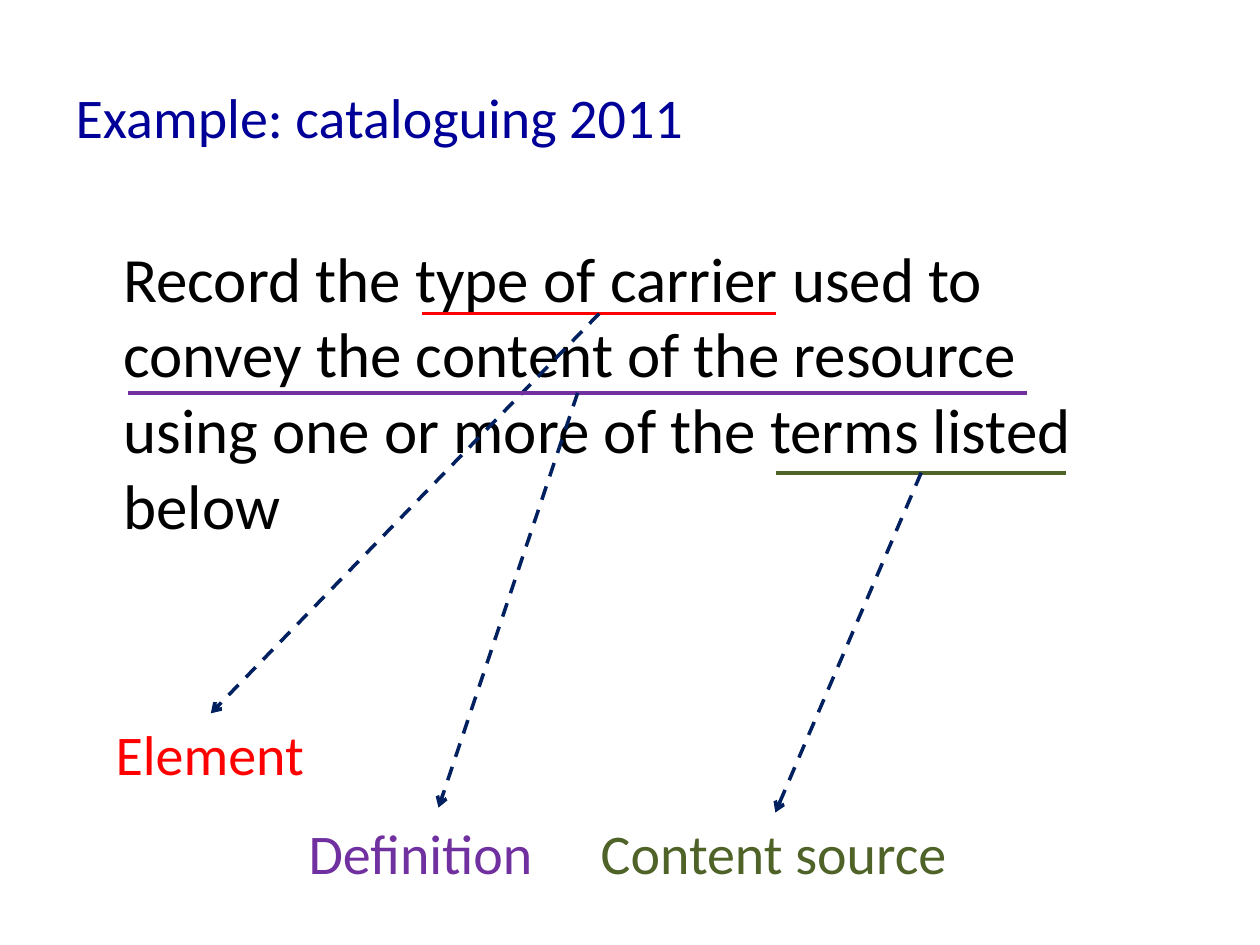
from pptx import Presentation
from pptx.dml.color import RGBColor
from pptx.enum import dml, shapes, text
from pptx.oxml.ns import qn
from pptx.util import Cm, Pt
from lxml import etree

COLORS = {"title": "000099", "body": "000000", "element": "FF0000",
          "definition": "7030A0", "source": "4F6228", "arrow": "002060"}

# label, colour, label box, underline (left, right, y), arrow end or None for the label's top
TERMS = [
    ("Element", "element", (2.08, 14.38, 4.34, 1.63), (8.51, 15.65, 6.32), None),
    ("Definition", "definition", (5.97, 16.38, 5.11, 1.63), (2.59, 20.7, 7.92), (8.84, 16.28)),
    ("Content source", "source", (11.86, 16.38, 7.54, 1.63), (15.65, 21.49, 9.53), None),
]


def place(sp, box):
    for name, value in zip(("left", "top", "width", "height"), box):
        setattr(sp, name, Cm(value))


def write(sp, words, color, size, **frame):
    """Put one left-aligned run in a shape; frame holds text frame settings."""
    tf = sp.text_frame
    for name, value in frame.items():
        setattr(tf, name, value)
    p = tf.paragraphs[0]
    p.alignment = text.PP_ALIGN.LEFT
    r = p.add_run()
    r.text = words
    for name, value in {"name": "Calibri", "size": Pt(size)}.items():
        setattr(r.font, name, value)
    r.font.color.rgb = RGBColor.from_string(COLORS[color])


def add_title(s, box):
    sp = s.shapes.title
    place(sp, box)
    write(sp, "Example: cataloguing 2011", "title", 32,
          vertical_anchor=text.MSO_ANCHOR.MIDDLE)


def add_text(s, box, words, color, size, wrap):
    sp = s.shapes.add_textbox(*map(Cm, box))
    write(sp, words, color, size, word_wrap=wrap,
          auto_size=text.MSO_AUTO_SIZE.SHAPE_TO_FIT_TEXT)
    return sp


def add_line(s, start, end, color):
    line = s.shapes.add_connector(shapes.MSO_CONNECTOR.STRAIGHT,
                                  *map(Cm, (*start, *end)))
    line.line.width = Pt(2)
    line.line.color.rgb = RGBColor.from_string(COLORS[color])
    etree.SubElement(line._element.spPr, qn("a:effectLst"))
    return line


def add_term(s, words, color, box, underline, target):
    """Underline a phrase and point from its middle to its label."""
    label = add_text(s, box, words, color, 32, False)
    left, right, y = underline
    add_line(s, (left, y), (right, y), color)
    x, top, width, _ = box
    arrow = add_line(s, ((left + right) / 2, y), target or (x + width / 2, top), "arrow")
    arrow.line.dash_style = dml.MSO_LINE.DASH
    etree.SubElement(arrow.line._get_or_add_ln(), qn("a:tailEnd"), type="arrow")
    if target is None:
        arrow.end_connect(label, 0)


def main():
    prs = Presentation()
    prs.slide_width, prs.slide_height = Cm(25.4), Cm(19.05)
    s = prs.slides.add_slide(prs.slide_layouts[5])
    add_title(s, (1.27, 0.76, 22.86, 3.18))
    add_text(s, (2.24, 4.7, 21.01, 6.4),
             "Record the type of carrier used to convey the content of the resource "
             "using one or more of the terms listed below", "body", 36, True)
    for term in TERMS:
        add_term(s, *term)
    prs.save("out.pptx")


if __name__ == "__main__":
    main()
